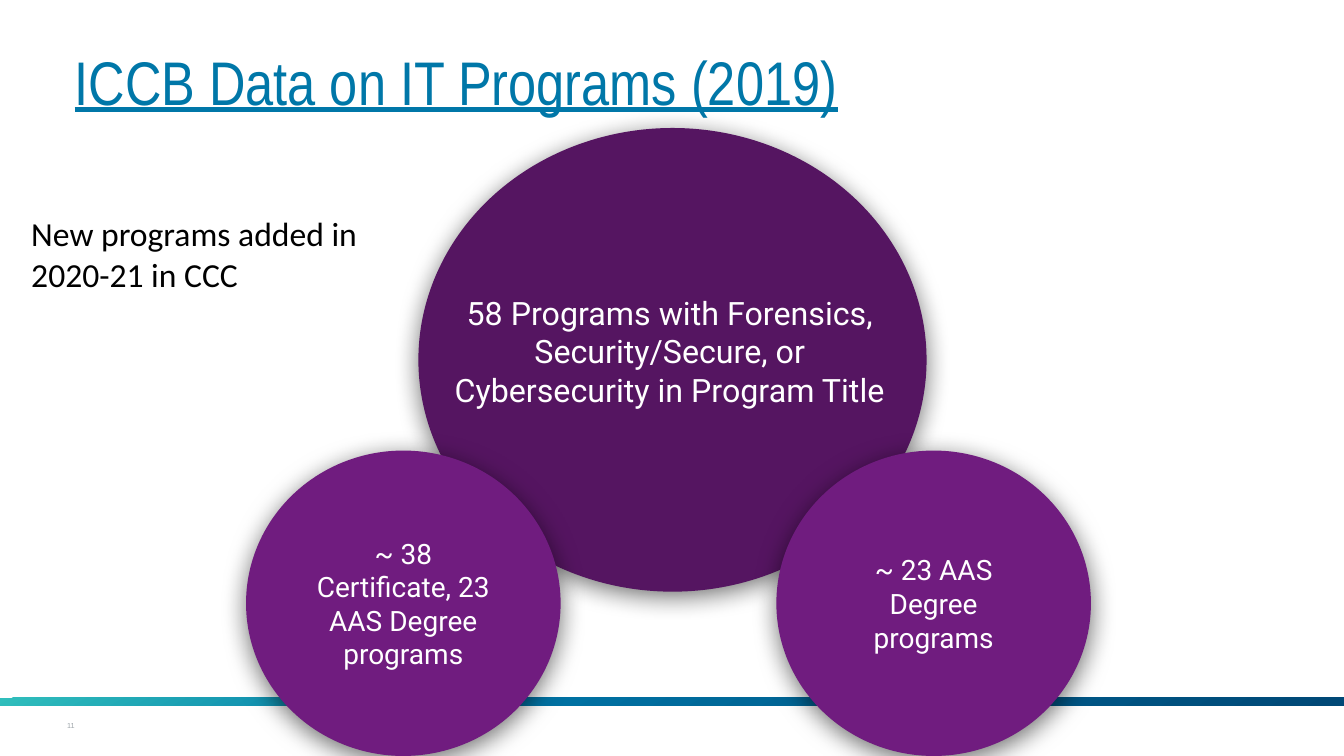
import pptx
import pptx.util
import pptx.dml.color
import pptx.enum.shapes
import pptx.enum.text
import pptx.oxml
import pptx.oxml.ns
from dataclasses import dataclass

Inches = pptx.util.Inches
Pt = pptx.util.Pt
Align = pptx.enum.text.PP_ALIGN
DRAWING = 'xmlns:a="http://schemas.openxmlformats.org/drawingml/2006/main"'


@dataclass(frozen=True)
class Theme:
    title_font: str = "Arial Narrow"
    body_font: str = "Calibri"
    circle_font: str = "Roboto"
    number_font: str = "Arial"
    title_size: float = 44
    body_size: float = 24
    main_size: float = 23
    part_size: float = 20
    number_size: float = 9
    blue: str = "0077A8"
    black: str = "000000"
    white: str = "FFFFFF"
    gray: str = "9FA6AB"
    dark_purple: str = "551561"
    purple: str = "701C7F"
    band: tuple = ((0, "30BEBC"), (33, "0077A8"), (100, "004876"))


class SlideBuilder:
    def __init__(self, page, theme):
        self.page = page
        self.theme = theme

    def set_text(self, box, text, font, size, color, align=Align.LEFT, insets=(0.1, 0.05, 0.1, 0.05)):
        frame = box.text_frame
        frame.text = text
        frame.word_wrap = True
        frame.auto_size = pptx.enum.text.MSO_AUTO_SIZE.NONE
        frame.vertical_anchor = pptx.enum.text.MSO_ANCHOR.MIDDLE
        frame.margin_left, frame.margin_top, frame.margin_right, frame.margin_bottom = map(Inches, insets)
        para = frame.paragraphs[0]
        para.alignment = align
        para.space_before = Pt(0)
        span = para.runs[0]
        span.font.name = font
        span.font.size = Pt(size)
        span.font.color.rgb = pptx.dml.color.RGBColor.from_string(color)
        return para

    def place(self, box, left, top, width, height):
        box.left, box.top, box.width, box.height = map(Inches, (left, top, width, height))

    def band(self, left, top, width, height):
        bar = self.page.shapes.add_shape(
            pptx.enum.shapes.MSO_SHAPE.RECTANGLE, *map(Inches, (left, top, width, height)))
        bar.shadow.inherit = False
        bar.line.fill.background()
        bar.fill.gradient()
        stops = "".join(f'<a:gs pos="{pos * 1000}"><a:srgbClr val="{color}"/></a:gs>'
                        for pos, color in self.theme.band)
        gradient = pptx.oxml.parse_xml(
            f'<a:gradFill {DRAWING} rotWithShape="1"><a:gsLst>{stops}</a:gsLst>'
            '<a:lin ang="3600000" scaled="0"/></a:gradFill>')
        properties = bar.element.spPr
        properties.replace(properties.find(pptx.oxml.ns.qn("a:gradFill")), gradient)

    def title(self, text, *area):
        box = self.page.shapes.title
        self.place(box, *area)
        para = self.set_text(box, text, self.theme.title_font, self.theme.title_size, self.theme.blue)
        para.line_spacing = 0.9
        para.runs[0].font.underline = True

    def body(self, text, *area):
        box = self.page.placeholders[1]
        self.place(box, *area)
        para = self.set_text(box, text, self.theme.body_font, self.theme.body_size,
                             self.theme.black, insets=(0, 0.05, 0.1, 0.05))
        para.space_after = Pt(12)
        properties = para._p.get_or_add_pPr()
        properties.set("marL", "0")
        properties.set("indent", "0")
        properties.append(pptx.oxml.parse_xml(f"<a:buNone {DRAWING}/>"))

    def number(self, text, *area):
        box = self.page.shapes.add_textbox(*map(Inches, area))
        para = self.set_text(box, text, self.theme.number_font, self.theme.number_size,
                             self.theme.gray, Align.RIGHT)
        para.runs[0]._r.get_or_add_rPr().set("baseline", "-25000")

    def circle(self, text, area, label_area, color, size):
        group = self.page.shapes.add_group_shape()
        disc = group.shapes.add_shape(pptx.enum.shapes.MSO_SHAPE.OVAL, *map(Inches, area))
        disc.fill.solid()
        disc.fill.fore_color.rgb = pptx.dml.color.RGBColor.from_string(color)
        disc.line.fill.background()
        disc.shadow.inherit = False
        effects = disc.element.spPr.find(pptx.oxml.ns.qn("a:effectLst"))
        effects.append(pptx.oxml.parse_xml(
            f'<a:outerShdw {DRAWING} blurRad="{Pt(18)}" dist="{Pt(4)}" dir="5400000" '
            f'rotWithShape="0"><a:srgbClr val="{self.theme.black}"><a:alpha val="55000"/>'
            '</a:srgbClr></a:outerShdw>'))
        label = group.shapes.add_textbox(*map(Inches, label_area))
        self.set_text(label, text, self.theme.circle_font, size, self.theme.white,
                      Align.CENTER, (0.13,) * 4)


def main():
    deck = pptx.Presentation()
    deck.slide_width, deck.slide_height = Inches(13.33), Inches(7.5)
    theme = Theme()
    builder = SlideBuilder(deck.slides.add_slide(deck.slide_layouts[1]), theme)

    # Heading, side note and footer
    builder.band(0, 6.92, 13.33, 0.08)
    builder.title("ICCB Data on IT Programs (2019)", 0.64, 0.42, 12.05, 0.85)
    builder.number("11", 0.31, 6.99, 0.53, 0.34)
    builder.body("New programs added in 2020-21 in CCC", 0.31, 1.85, 3.51, 1.33)

    # Main circle, then the two smaller circles over it
    builder.circle("58 Programs with Forensics, Security/Secure, or Cybersecurity in Program Title",
                   (4.15, 1.27, 5.04, 4.6), (4.25, 2.2, 4.79, 2.56),
                   theme.dark_purple, theme.main_size)
    for left, text in ((2.44, "~ 38 Certificate, 23 AAS Degree programs"),
                       (7.7, "~ 23 AAS Degree programs")):
        builder.circle(text, (left, 4.47, 3.12, 3.03), (left + 0.5, 4.98, 2.12, 2.01),
                       theme.purple, theme.part_size)

    deck.save("out.pptx")


if __name__ == "__main__":
    main()
